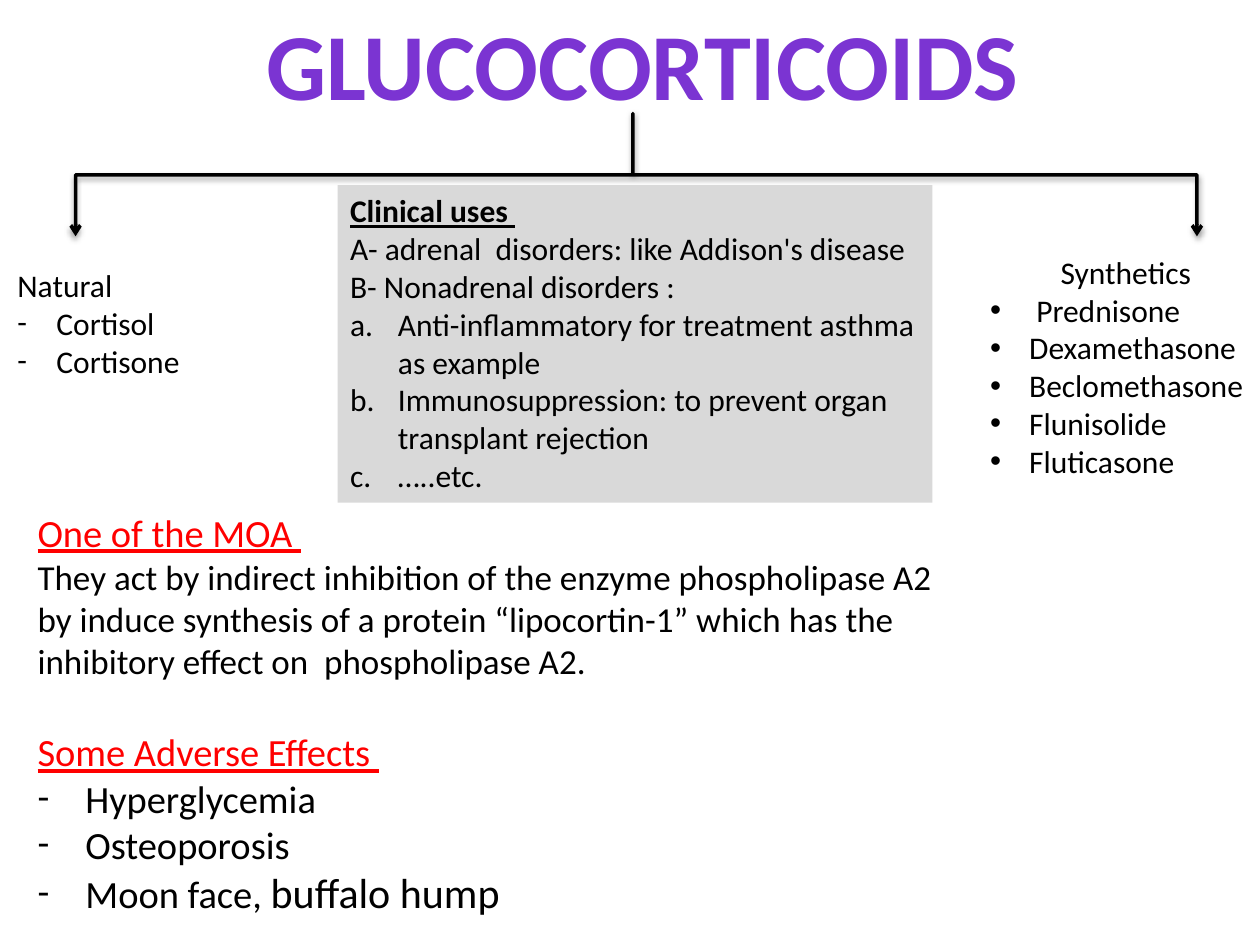
from dataclasses import dataclass

from lxml import etree
from pptx import Presentation
from pptx.dml.color import RGBColor
from pptx.enum.shapes import MSO_SHAPE
from pptx.enum.text import MSO_ANCHOR, MSO_AUTO_SIZE, PP_ALIGN
from pptx.oxml import parse_xml
from pptx.oxml.ns import nsdecls, qn
from pptx.util import Inches, Pt

LEFT, CENTER = PP_ALIGN.LEFT, PP_ALIGN.CENTER
TOP = MSO_ANCHOR.TOP
GROW = MSO_AUTO_SIZE.SHAPE_TO_FIT_TEXT
RECTANGLE, BRACE = MSO_SHAPE.RECTANGLE, MSO_SHAPE.RIGHT_BRACE
DASH, DOT, LETTER = "-", "•", "alphaLcPeriod"
WIDTH, HEIGHT = Inches(10), Inches(7.5)


@dataclass(frozen=True)
class Theme:
    font: str = "Calibri"
    ink: str = "000000"
    heading: str = "FF0000"
    panel: str = "D9D9D9"
    title_stops: tuple = ((0, "3D1B67"), (43, "7B34D2"), (48, "7330C4"), (100, "3D1B67"))
    title: int = 54
    large: int = 24
    section: int = 22
    body: int = 20
    label: int = 18


THEME = Theme()


@dataclass(frozen=True)
class Run:
    text: str
    size: int = THEME.label
    color: str = THEME.ink
    bold: bool = False
    underline: bool = False


@dataclass(frozen=True)
class Line:
    runs: tuple
    align: PP_ALIGN = LEFT
    bullet: str = ""
    indent: float = 0
    before: int = 0


@dataclass(frozen=True)
class Area:
    """Left, top, width and height as shares of the slide."""
    x: float
    y: float
    w: float
    h: float

    def box(self) -> tuple:
        return (int(self.x * WIDTH), int(self.y * HEIGHT),
                int(self.w * WIDTH), int(self.h * HEIGHT))


def line(text: str, align=LEFT, bullet="", indent=0, before=0, **style) -> Line:
    return Line((Run(text, **style),), align, bullet, indent, before)


def items(names: tuple, bullet: str, indent: float, **style) -> tuple:
    return tuple(line(name, bullet=bullet, indent=indent, **style) for name in names)


def add_bullet(paragraph, bullet: str, indent: float) -> None:
    props = paragraph._p.get_or_add_pPr()
    props.set("marL", str(Inches(indent)))
    props.set("indent", str(-Inches(indent)))
    if bullet == LETTER:
        etree.SubElement(props, qn("a:buAutoNum"), type=LETTER)
        return
    face = "Arial" if bullet == DOT else THEME.font
    etree.SubElement(props, qn("a:buFont"), typeface=face)
    etree.SubElement(props, qn("a:buChar"), char=bullet)


def write(shape, lines: tuple, wrap: bool = True) -> None:
    frame = shape.text_frame
    frame.word_wrap, frame.auto_size, frame.vertical_anchor = wrap, GROW, TOP
    for number, content in enumerate(lines):
        paragraph = frame.add_paragraph() if number else frame.paragraphs[0]
        paragraph.alignment = content.align
        if content.before:
            paragraph.space_before = Pt(content.before)
        if content.bullet:
            add_bullet(paragraph, content.bullet, content.indent)
        for part in content.runs:
            run = paragraph.add_run()
            run.text = part.text
            font = run.font
            font.name, font.size = THEME.font, Pt(part.size)
            font.bold, font.underline = part.bold, part.underline
            font.color.rgb = RGBColor.from_string(part.color)


def add_text(slide, area: Area, lines: tuple, wrap: bool = True):
    box = slide.shapes.add_textbox(*area.box())
    write(box, lines, wrap)
    return box


def add_panel(slide, area: Area, lines: tuple) -> None:
    panel = slide.shapes.add_shape(RECTANGLE, *area.box())
    panel.shadow.inherit = False
    panel.fill.solid()
    panel.fill.fore_color.rgb = RGBColor.from_string(THEME.panel)
    panel.line.fill.background()
    write(panel, lines)


def shade_title(box) -> None:
    """Give the title its vertical gradient."""
    stops = "".join(f'<a:gs pos="{share * 1000}"><a:srgbClr val="{color}"/></a:gs>'
                    for share, color in THEME.title_stops)
    gradient = parse_xml(f'<a:gradFill {nsdecls("a")}><a:gsLst>{stops}</a:gsLst>'
                         '<a:lin ang="5400000"/></a:gradFill>')
    props = box.text_frame.paragraphs[0].runs[0].font._element
    props.replace(props.find(qn("a:solidFill")), gradient)


def add_branches(slide, area: Area) -> None:
    """Draw a square brace, turned to point up, with an arrowhead on each end."""
    left, top, span, drop = area.box()
    brace = slide.shapes.add_shape(BRACE, left + (span - drop) // 2,
                                   top + (drop - span) // 2, drop, span)
    brace.rotation = 270
    brace.adjustments[0], brace.adjustments[1] = 0, 0.497
    brace.fill.background()
    brace.line.color.rgb = RGBColor.from_string(THEME.ink)
    brace.line.width = Pt(2)
    for end in ("a:headEnd", "a:tailEnd"):
        etree.SubElement(brace.line._get_or_add_ln(), qn(end), type="arrow")
    brace._element.spPr.append(parse_xml(
        f'<a:effectLst {nsdecls("a")}><a:outerShdw blurRad="{Pt(3.1)}" dist="{Pt(1.6)}" '
        f'dir="5400000" rotWithShape="0"><a:srgbClr val="{THEME.ink}">'
        '<a:alpha val="38000"/></a:srgbClr></a:outerShdw></a:effectLst>'))


def main() -> None:
    deck = Presentation()
    deck.slide_width, deck.slide_height = WIDTH, HEIGHT
    slide = deck.slides.add_slide(deck.slide_layouts[6])

    heading = dict(size=THEME.section, color=THEME.heading, underline=True)
    natural = (line("Natural"), *items(("Cortisol", "Cortisone"), DASH, 0.31))
    synthetics = (
        line("Synthetics", align=CENTER),
        *items((" Prednisone", "Dexamethasone", "Beclomethasone", "Flunisolide",
                "Fluticasone"), DOT, 0.31))
    effects = (
        line("One of the MOA ", **heading),
        line("They act by indirect inhibition of the enzyme phospholipase A2 by induce "
             "synthesis of a protein “lipocortin-1” which has the inhibitory effect on  "
             "phospholipase A2.", size=THEME.body),
        line("Some Adverse Effects ", before=27, **heading),
        *items(("Hyperglycemia", "Osteoporosis"), DASH, 0.38, size=THEME.section),
        Line((Run("Moon face, ", THEME.section), Run("buffalo hump", THEME.large)),
             bullet=DASH, indent=0.38))
    uses = (
        line("Clinical uses ", bold=True, underline=True),
        line("A- adrenal  disorders: like Addison's disease"),
        line("B- Nonadrenal disorders :"),
        *items(("Anti-inflammatory for treatment asthma as example",
                "Immunosuppression: to prevent organ transplant rejection",
                "…..etc."), LETTER, 0.38))

    title = add_text(slide, Area(0.2, 0, 0.62, 0.13), (
        line("GLUCOCORTICOIDS", align=CENTER, size=THEME.title,
             color=THEME.title_stops[1][1], bold=True),), wrap=False)
    shade_title(title)
    add_branches(slide, Area(0.06, 0.12, 0.89, 0.13))
    add_text(slide, Area(0.004, 0.275, 0.164, 0.135), natural)
    add_text(slide, Area(0.776, 0.261, 0.235, 0.296), synthetics)
    add_text(slide, Area(0.02, 0.532, 0.756, 0.463), effects)
    add_panel(slide, Area(0.268, 0.196, 0.472, 0.336), uses)
    deck.save("out.pptx")


if __name__ == "__main__":
    main()
